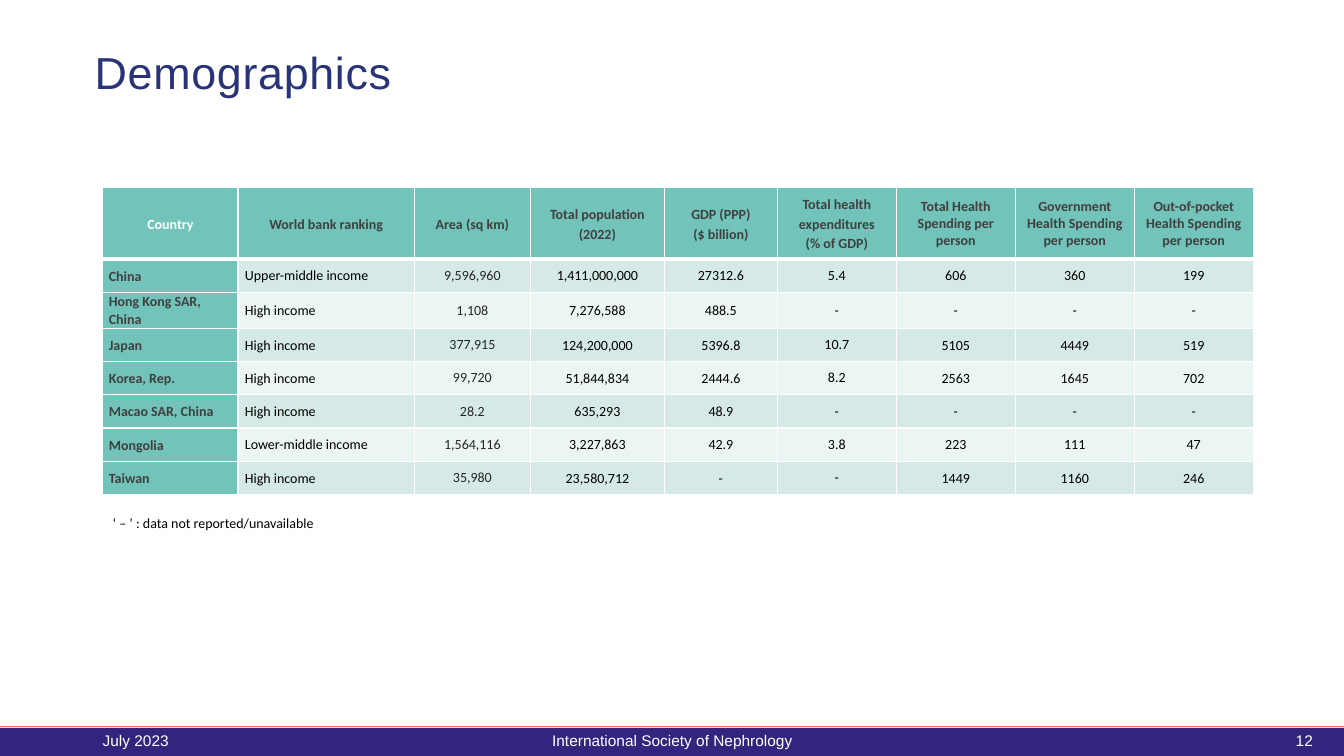
import pptx
import pptx.dml.color
import pptx.enum.shapes
import pptx.enum.text
import pptx.oxml
import pptx.oxml.ns
import pptx.util

Inches = pptx.util.Inches
Pt = pptx.util.Pt
ALIGN = pptx.enum.text.PP_ALIGN
MIDDLE = pptx.enum.text.MSO_ANCHOR.MIDDLE

COLORS = {
    "navy": "32257E", "coral": "FE7055", "title": "283378",
    "teal": "72C3B9", "band_dark": "D5E9E6", "band_light": "EBF5F3",
    "label": "404040", "area": "262626", "black": "000000", "white": "FFFFFF",
}

COLUMN_WIDTHS = [1.34, 1.75, 1.15, 1.33, 1.12] + [1.18] * 4
HEADER_HEIGHT, ROW_HEIGHT = 0.71, 0.33
HEADINGS = [
    "Country", "World bank ranking", "Area (sq km)", "Total population (2022)",
    "GDP (PPP)\n($ billion)", "Total health expenditures\n(% of GDP)",
    "Total Health Spending per person", "Government Health Spending per person",
    "Out-of-pocket Health Spending per person",
]
COUNTRIES = [
    ["China", "Upper-middle income", "9,596,960", "1,411,000,000", "27312.6", "5.4", "606", "360", "199"],
    ["Hong Kong SAR, China", "High income", "1,108", "7,276,588", "488.5", "-", "-", "-", "-"],
    ["Japan", "High income", "377,915", "124,200,000", "5396.8", "10.7", "5105", "4449", "519"],
    ["Korea, Rep.", "High income", "99,720", "51,844,834", "2444.6", "8.2", "2563", "1645", "702"],
    ["Macao SAR, China", "High income", "28.2", "635,293", "48.9", "-", "-", "-", "-"],
    ["Mongolia", "Lower-middle income", "1,564,116", "3,227,863", "42.9", "3.8", "223", "111", "47"],
    ["Taiwan", "High income", "35,980", "23,580,712", "-", "-", "1449", "1160", "246"],
]


def rgb(name):
    return pptx.dml.color.RGBColor.from_string(COLORS[name])


def write_text(frame, text, *, size=10, font="Calibri", color="black", bold=False,
               align=ALIGN.LEFT, line_spacing=None, tracking=0):
    """Fill a text frame, one paragraph per line of text."""
    frame.word_wrap = True
    for index, line in enumerate(text.split("\n")):
        paragraph = frame.add_paragraph() if index else frame.paragraphs[0]
        paragraph.alignment = align
        paragraph.line_spacing = line_spacing
        run = paragraph.add_run()
        run.text = line
        run.font.size = Pt(size)
        run.font.name = font
        run.font.bold = bold
        run.font.color.rgb = rgb(color)
        if tracking:
            run._r.get_or_add_rPr().set("spc", str(int(tracking * 100)))


def add_label(slide, left, top, width, height, text, anchor=MIDDLE, **text_format):
    box = slide.shapes.add_textbox(Inches(left), Inches(top), Inches(width), Inches(height))
    box.text_frame.vertical_anchor = anchor
    write_text(box.text_frame, text, **text_format)


def set_borders(cell, **widths):
    """Draw white cell borders, with widths in points for L, R, T and B."""
    properties = cell._tc.get_or_add_tcPr()
    for index, side in enumerate("LRTB"):
        border = pptx.oxml.parse_xml(
            f'<a:ln{side} {pptx.oxml.ns.nsdecls("a")} w="{Pt(widths.get(side, 1))}">'
            f'<a:solidFill><a:srgbClr val="{COLORS["white"]}"/></a:solidFill></a:ln{side}>')
        properties.insert(index, border)


def fill_cell(cell, text, fill, margins, **text_format):
    """Style a cell; margins are left, top, right and bottom in inches."""
    cell.fill.solid()
    cell.fill.fore_color.rgb = rgb(fill)
    (cell.margin_left, cell.margin_top,
     cell.margin_right, cell.margin_bottom) = map(Inches, margins)
    cell.vertical_anchor = MIDDLE
    write_text(cell.text_frame, text, **text_format)


def add_header_row(table):
    for column, heading in enumerate(HEADINGS):
        spending = column >= 6
        cell = table.cell(0, column)
        fill_cell(cell, heading, "teal",
                  (0.05, 0.02, 0.05, 0.02) if spending else (0.02, 0, 0.02, 0),
                  color="label" if column else "white", bold=True, align=ALIGN.CENTER,
                  line_spacing=None if spending else 1.15)
        set_borders(cell, B=3)


def add_country_row(table, row, values):
    band = "band_dark" if row % 2 else "band_light"
    for column, value in enumerate(values):
        cell = table.cell(row, column)
        if column == 0:
            fill_cell(cell, value, "teal", (0.06, 0, 0.06, 0),
                      color="label", bold=True, line_spacing=1.07)
        elif column == 1:
            fill_cell(cell, value, band, (0.07, 0.01, 0.01, 0))
        else:
            plain = column in (2, 5)
            fill_cell(cell, value, band, (0, 0, 0, 0) if plain else (0.01, 0.01, 0.01, 0),
                      color="area" if column == 2 else "black", align=ALIGN.CENTER)
        set_borders(cell, T=3 if row == 1 else 1)


def add_demographics_table(slide):
    row_count = len(COUNTRIES) + 1
    table = slide.shapes.add_table(
        row_count, len(HEADINGS), Inches(1.02), Inches(1.86), Inches(sum(COLUMN_WIDTHS)),
        Inches(HEADER_HEIGHT + ROW_HEIGHT * len(COUNTRIES))).table
    for column, width in zip(table.columns, COLUMN_WIDTHS):
        column.width = Inches(width)
    for index, row in enumerate(table.rows):
        row.height = Inches(ROW_HEIGHT if index else HEADER_HEIGHT)
    add_header_row(table)
    for row, values in enumerate(COUNTRIES, start=1):
        add_country_row(table, row, values)


def add_footer(slide):
    band = slide.shapes.add_shape(pptx.enum.shapes.MSO_SHAPE.RECTANGLE,
                                  Inches(0), Inches(7.22), Inches(13.33), Inches(0.28))
    band.shadow.inherit = False
    band.fill.solid()
    band.fill.fore_color.rgb = rgb("navy")
    band.line.fill.background()

    rule = slide.shapes.add_connector(pptx.enum.shapes.MSO_CONNECTOR.STRAIGHT,
                                      Inches(0), Inches(7.21), Inches(13.33), Inches(7.21))
    rule.line.color.rgb = rgb("coral")
    rule.line.width = Pt(0.75)
    rule._element.spPr.append(
        pptx.oxml.parse_xml(f'<a:effectLst {pptx.oxml.ns.nsdecls("a")}/>'))

    for left, width, text, align in [
        (0.92, 3, "July 2023", ALIGN.LEFT),
        (4.42, 4.5, "International Society of Nephrology", ALIGN.CENTER),
        (9.42, 3.7, "12", ALIGN.RIGHT),
    ]:
        add_label(slide, left, 7.15, width, 0.4, text,
                  size=11, font="Arial", color="white", align=align)


def main():
    presentation = pptx.Presentation()
    presentation.slide_width = Inches(13.33)
    presentation.slide_height = Inches(7.5)
    slide = presentation.slides.add_slide(presentation.slide_layouts[6])
    add_footer(slide)
    add_label(slide, 0.84, 0.39, 9.26, 0.71, "Demographics", size=32, font="Arial",
              color="title", line_spacing=0.9, tracking=0.5)
    add_demographics_table(slide)
    add_label(slide, 1.02, 5.06, 2.24, 0.27, "‘ – ’ : data not reported/unavailable",
              anchor=pptx.enum.text.MSO_ANCHOR.TOP)
    presentation.save("out.pptx")


if __name__ == "__main__":
    main()
